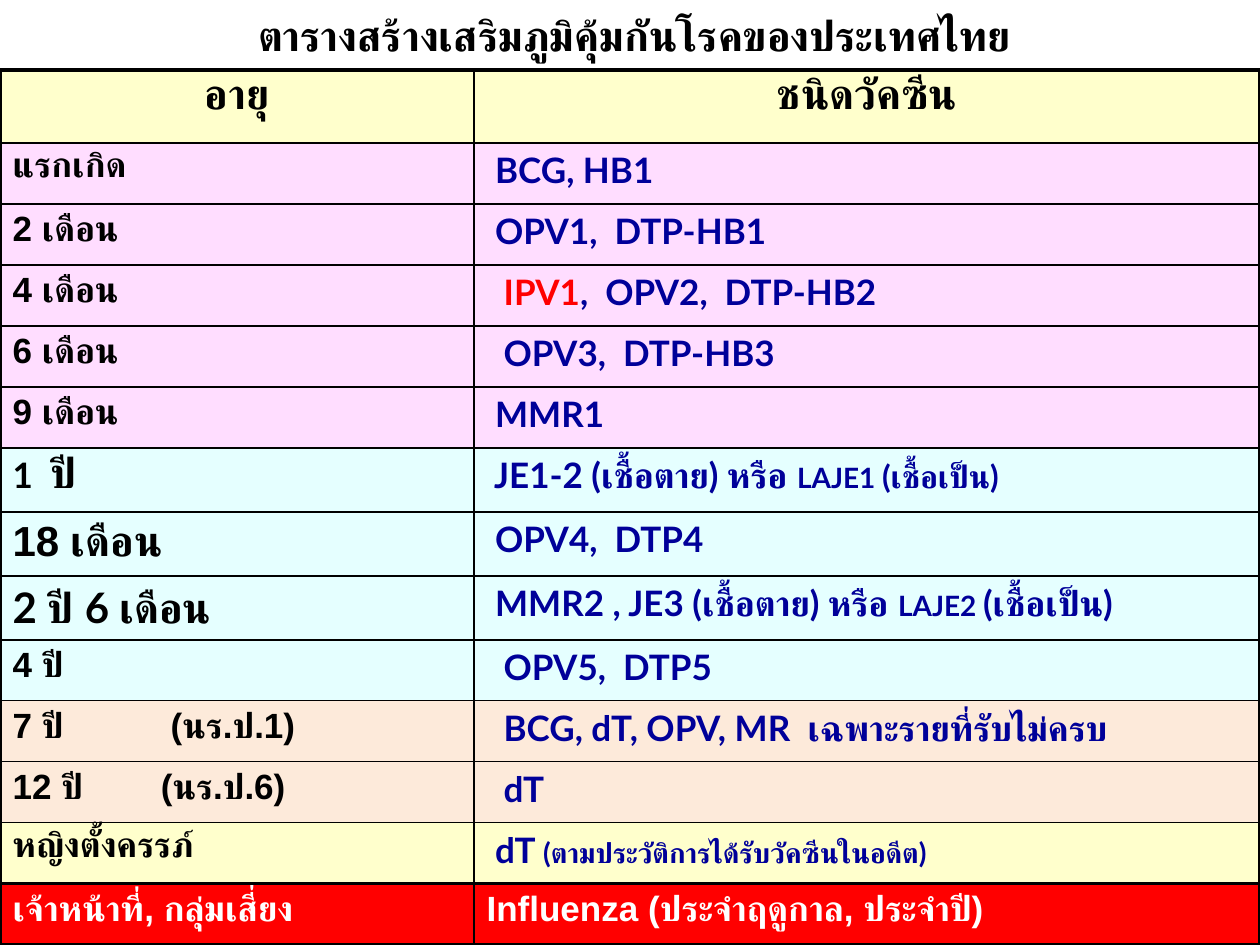
from dataclasses import dataclass

import lxml.etree
import pptx
import pptx.dml.color
import pptx.enum.text
import pptx.oxml
import pptx.oxml.ns
import pptx.util

PX = 914400 // 126
COLORS = {
    "black": "000000", "white": "FFFFFF", "navy": "000099", "red": "FF0000",
    "cream": "FFFFCC", "pink": "FFDDFF", "aqua": "E5FFFF", "peach": "FDEADA",
}
THIN, THICK = 1, 2.25
COLUMN_WIDTHS = (474, 786)
TABLE_TOP = 70


@dataclass(frozen=True)
class Run:
    text: str
    size: int = 20
    font: str = "Lato"
    color: str = "navy"


@dataclass(frozen=True)
class Row:
    age: tuple[Run, ...]
    vaccines: tuple[Run, ...]
    fill: str
    height: int = 61
    centered: bool = False


def age(text: str, size: int = 20, font: str = "Arial", color: str = "black") -> Run:
    return Run(text, size, font, color)


ROWS = (
    Row((age("อายุ", 24),), (age("ชนิดวัคซีน", 24),), "cream", 73, True),
    Row((age("แรกเกิด"),), (Run(" BCG, HB1"),), "pink"),
    Row((age("2 เดือน"),), (Run(" OPV1,  DTP-HB1"),), "pink"),
    Row((age("4 เดือน"),),
        (Run("  "), Run("IPV1", color="red"), Run(",  OPV2,  DTP-HB2")), "pink"),
    Row((age("6 เดือน"),), (Run("  OPV3,  DTP-HB3"),), "pink"),
    Row((age("9 เดือน"),), (Run(" MMR1"),), "pink"),
    Row((age("1  ", font="Lato"), age("ปี", 24, "Lato")),
        (Run(" JE1-2 (เชื้อตาย) หรือ "), Run("LAJE1 ", 16), Run("(เชื้อเป็น)", 18)),
        "aqua", 64),
    Row((age("18 เดือน", 24),), (Run(" OPV4,  DTP4"),), "aqua", 64),
    Row((age("2 ปี 6 เดือน", 24, "Lato"),),
        (Run(" MMR2 , JE3 (เชื้อตาย) หรือ "), Run("LAJE2 ", 16), Run("(เชื้อเป็น)")),
        "aqua", 64),
    Row((age("4 ปี"),), (Run("  OPV5,  DTP5"),), "aqua"),
    Row((age("7 ปี           (นร.ป.1)"),),
        (Run("  BCG, dT, OPV, MR  เฉพาะรายที่รับไม่ครบ"),), "peach"),
    Row((age("12 ปี        (นร.ป.6)"),), (Run("  dT"),), "peach"),
    Row((age("หญิงตั้งครรภ์"),),
        (Run(" dT "), Run("(ตามประวัติการได้รับวัคซีนในอดีต)", 16)), "cream"),
    Row((age("เจ้าหน้าที่, กลุ่มเสี่ยง", color="white"),),
        (age("Influenza (ประจำฤดูกาล, ประจำปี)", color="white"),), "red"),
)


def rgb(name: str) -> pptx.dml.color.RGBColor:
    return pptx.dml.color.RGBColor.from_string(COLORS[name])


def add_text(paragraph, text: str, *, size: int, font: str, color: str) -> None:
    run = paragraph.add_run()
    run.text = text
    run.font.size = pptx.util.Pt(size)
    run.font.name = font
    run.font.bold = True
    run.font.color.rgb = rgb(color)


def write_runs(paragraph, runs: tuple[Run, ...], centered: bool) -> None:
    if centered:
        paragraph.alignment = pptx.enum.text.PP_ALIGN.CENTER
    for run in runs:
        add_text(paragraph, run.text, size=run.size, font=run.font, color=run.color)


def space_before(paragraph, percent: int) -> None:
    paragraph.space_before = pptx.util.Pt(0)
    spacing = paragraph._p.pPr.find(pptx.oxml.ns.qn("a:spcBef"))
    spacing.clear()
    lxml.etree.SubElement(spacing, pptx.oxml.ns.qn("a:spcPct"), val=str(percent * 1000))


def set_borders(cell, widths: dict[str, float]) -> None:
    properties = cell._tc.get_or_add_tcPr()
    for position, (side, width) in enumerate(widths.items()):
        border = pptx.oxml.parse_xml(
            f'<a:ln{side} {pptx.oxml.ns.nsdecls("a")} w="{pptx.util.Pt(width)}">'
            f'<a:solidFill><a:srgbClr val="{COLORS["black"]}"/></a:solidFill></a:ln{side}>'
        )
        properties.insert(position, border)


def add_schedule(slide) -> None:
    frame = slide.shapes.add_table(
        len(ROWS), len(COLUMN_WIDTHS), 0, TABLE_TOP * PX,
        sum(COLUMN_WIDTHS) * PX, sum(row.height for row in ROWS) * PX,
    )
    table = frame.table
    table.horz_banding = False
    table.first_row = False
    for column, width in zip(table.columns, COLUMN_WIDTHS):
        column.width = width * PX
    last = len(ROWS) - 1
    for row_index, row in enumerate(ROWS):
        table.rows[row_index].height = row.height * PX
        for column_index, runs in enumerate((row.age, row.vaccines)):
            cell = table.cell(row_index, column_index)
            cell.fill.solid()
            cell.fill.fore_color.rgb = rgb(row.fill)
            set_borders(cell, {
                "L": THICK if column_index == 0 else THIN,
                "R": THICK if column_index == 1 else THIN,
                "T": THICK if row_index in (0, last) else THIN,
                "B": THICK if row_index >= last - 1 else THIN,
            })
            paragraph = cell.text_frame.paragraphs[0]
            write_runs(paragraph, runs, row.centered)
            space_before(paragraph, 20)


def add_title(slide) -> None:
    title = slide.shapes.add_textbox(44 * PX, -10 * PX, 1181 * PX, 89 * PX)
    title.text_frame.word_wrap = True
    title.text_frame.vertical_anchor = pptx.enum.text.MSO_ANCHOR.MIDDLE
    heading = Run("ตารางสร้างเสริมภูมิคุ้มกันโรคของประเทศไทย", 24, color="black")
    write_runs(title.text_frame.paragraphs[0], (heading,), True)


def main() -> None:
    presentation = pptx.Presentation()
    presentation.slide_width = 1260 * PX
    presentation.slide_height = 945 * PX
    slide = presentation.slides.add_slide(presentation.slide_layouts[6])
    add_schedule(slide)
    add_title(slide)
    presentation.save("out.pptx")


if __name__ == "__main__":
    main()
